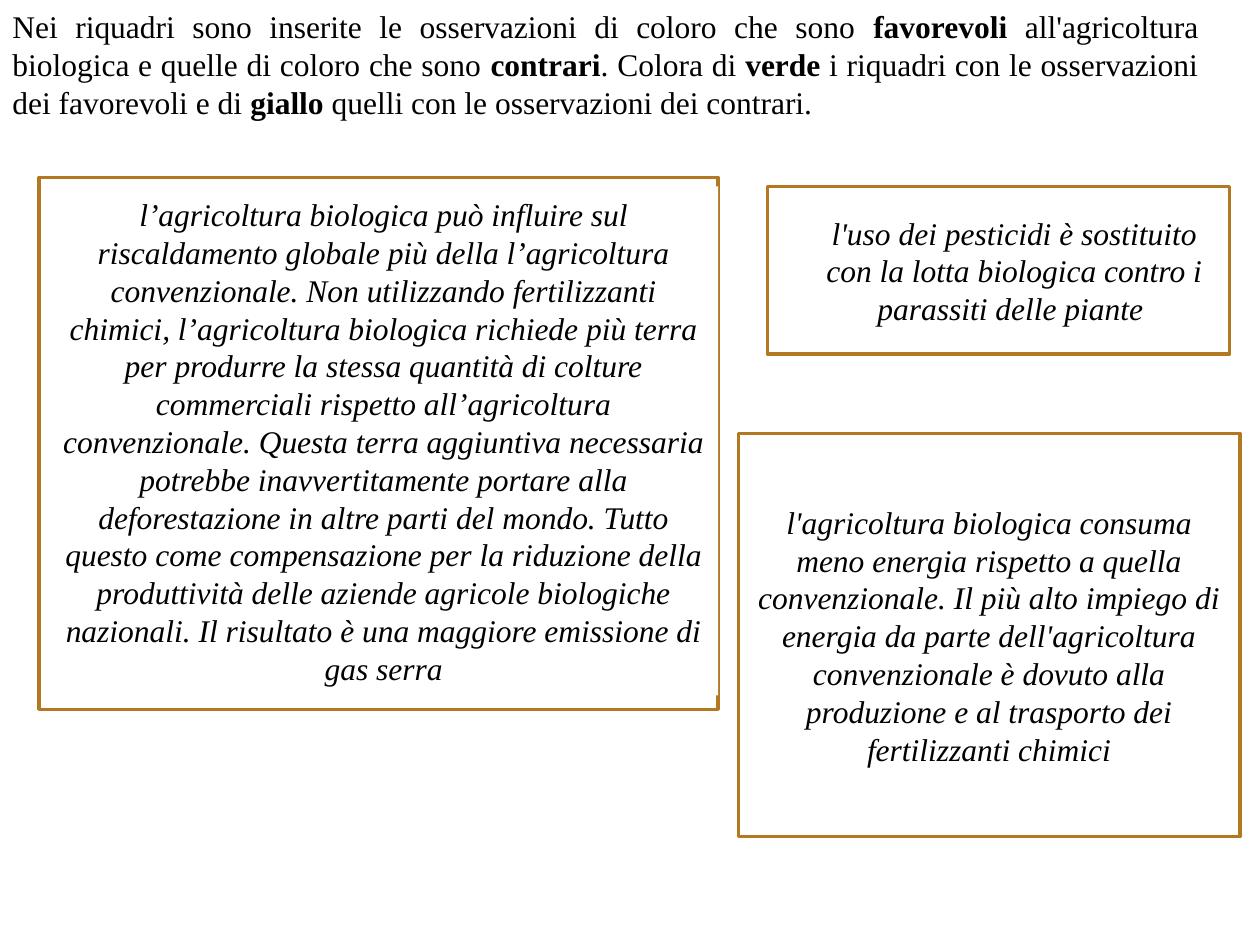
from pptx import Presentation
from pptx.dml.color import RGBColor
from pptx.enum.shapes import MSO_SHAPE as Shape
from pptx.enum.text import MSO_ANCHOR as Anchor, MSO_AUTO_SIZE as Fit, PP_ALIGN as Align
from pptx.util import Inches, Pt

COLS, ROWS = 100, 75
WIDE, HIGH = Inches(10), Inches(7.5)

TASK = (
    "Nei riquadri sono inserite le osservazioni di coloro che sono *favorevoli *"
    "all'agricoltura biologica e quelle di coloro che sono *contrari*. Colora di "
    "*verde* i riquadri con le osservazioni dei favorevoli e di *giallo* quelli "
    "con le osservazioni dei contrari."
)
WARMING = (
    "l’agricoltura biologica può influire sul riscaldamento globale più della "
    "l’agricoltura convenzionale. Non utilizzando fertilizzanti chimici, "
    "l’agricoltura biologica richiede più terra per produrre la stessa quantità "
    "di colture commerciali rispetto all’agricoltura convenzionale. Questa terra "
    "aggiuntiva necessaria potrebbe inavvertitamente portare alla deforestazione "
    "in altre parti del mondo. Tutto questo come compensazione per la riduzione "
    "della produttività delle aziende agricole biologiche nazionali. Il risultato "
    "è una maggiore emissione di gas serra"
)
PESTS = (
    "l'uso dei pesticidi è sostituito con la lotta biologica contro i parassiti "
    "delle piante "
)
ENERGY = (
    "l'agricoltura biologica consuma meno energia rispetto a quella convenzionale. "
    "Il più alto impiego di energia da parte dell'agricoltura convenzionale è "
    "dovuto alla produzione e al trasporto dei fertilizzanti chimici"
)


def color(code):
    """Turn a hex string into a colour."""
    return RGBColor.from_string(code)


def place(box):
    """Turn columns and rows of the grid into slide lengths."""
    left, top, width, height = box
    return (
        int(left * WIDE / COLS), int(top * HIGH / ROWS),
        int(width * WIDE / COLS), int(height * HIGH / ROWS),
    )


def write(shape, text, align=Align.CENTER, italic=True, size=18, ink="000000", fit=Fit.NONE):
    """Write text into a shape, with the parts between asterisks in bold."""
    frame = shape.text_frame
    frame.word_wrap = True
    frame.auto_size = fit
    frame.vertical_anchor = Anchor.MIDDLE
    para = frame.paragraphs[0]
    para.alignment = align
    for index, part in enumerate(text.split("*")):
        run = para.add_run()
        run.text = part
        font = run.font
        font.name, font.size = "Times New Roman", Pt(size)
        font.bold, font.italic = index % 2 == 1, italic
        font.color.rgb = color(ink)


def frame(slide, box, line="B27822"):
    """Draw a white rectangle, outlined when a line colour is given."""
    shape = slide.shapes.add_shape(Shape.RECTANGLE, *place(box))
    shape.shadow.inherit = False
    shape.fill.solid()
    shape.fill.fore_color.rgb = color("FFFFFF")
    if line:
        shape.line.color.rgb = color(line)
        shape.line.width = Pt(2)
    else:
        shape.line.fill.background()
    return shape


def label(slide, box, text, **style):
    """Add a text box that grows with its text."""
    write(slide.shapes.add_textbox(*place(box)), text, fit=Fit.SHAPE_TO_FIT_TEXT, **style)


def warming(slide, box):
    """Place the large panel with a white text block on its right edge."""
    left, top, width, height = box
    frame(slide, box)
    block = frame(slide, (left + 0.8, top + 0.7, width - 0.8, height - 1.8), line=None)
    write(block, WARMING, fit=Fit.SHAPE_TO_FIT_TEXT)


def pests(slide, box):
    """Place the small panel with its text set to the right."""
    left, top, width, height = box
    frame(slide, box)
    label(slide, (left + 3.2, top + 1.6, width - 3.9, height - 3.2), PESTS)


def energy(slide, box):
    """Place the panel that holds its own text."""
    write(frame(slide, box), ENERGY)


def main():
    """Build and save the slide."""
    deck = Presentation()
    deck.slide_width, deck.slide_height = WIDE, HIGH
    slide = deck.slides.add_slide(deck.slide_layouts[6])
    label(slide, (0, 0, 96.1, 10.1), TASK, align=Align.JUSTIFY, italic=False)
    warming(slide, (3.1, 14.1, 53.9, 42.2))
    pests(slide, (60.9, 14.8, 36.7, 13.3))
    energy(slide, (58.6, 34.4, 39.8, 32))
    deck.save("out.pptx")


if __name__ == "__main__":
    main()
